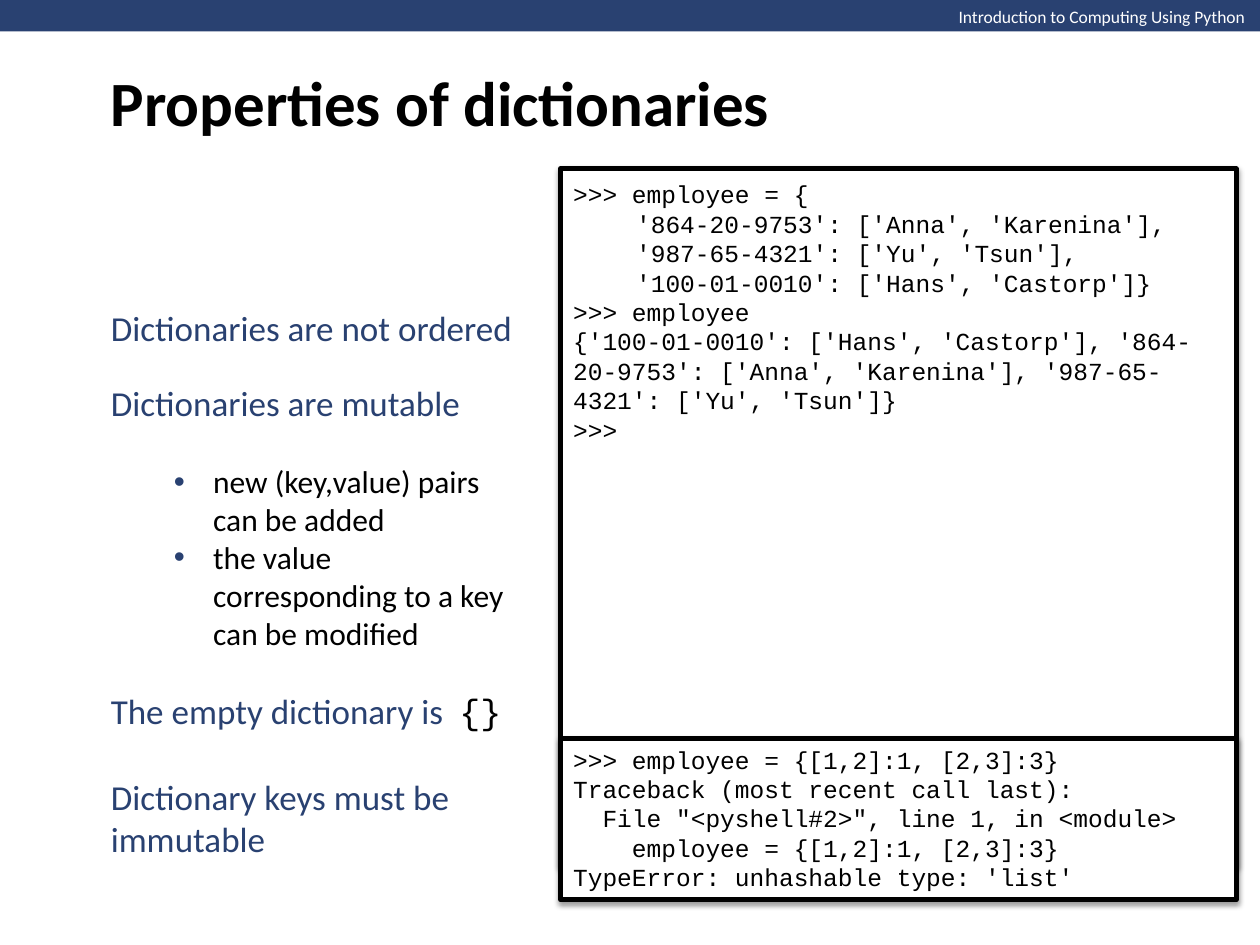
from lxml.etree import SubElement
from pptx import Presentation
from pptx.dml.color import RGBColor
from pptx.enum.shapes import MSO_SHAPE
from pptx.enum.text import MSO_ANCHOR, PP_ALIGN
from pptx.oxml.ns import qn
from pptx.util import Pt

NAVY, BLACK, WHITE = "294171", "000000", "FFFFFF"
SANS, MONO = "Calibri", "Courier New"

EMPLOYEE_SESSION = [
    ">>> employee = {",
    "\t'864-20-9753': ['Anna', 'Karenina'],",
    "\t'987-65-4321': ['Yu', 'Tsun'],",
    "\t'100-01-0010': ['Hans', 'Castorp']}",
    ">>> employee",
    "{'100-01-0010': ['Hans', 'Castorp'], '864-20-9753': ['Anna', 'Karenina'], "
    "'987-65-4321': ['Yu', 'Tsun']}",
    ">>>",
]
ERROR_SESSION = [
    ">>> employee = {[1,2]:1, [2,3]:3}",
    "Traceback (most recent call last):",
    "  File \"<pyshell#2>\", line 1, in <module>",
    "    employee = {[1,2]:1, [2,3]:3}",
    "TypeError: unhashable type: 'list'",
]
MUTABLE_POINTS = [
    "new (key,value) pairs can be added",
    "the value corresponding to a key can be modified",
]


def color(value):
    return RGBColor.from_string(value)


def add_span(para, text, size, tone, font=SANS, bold=False):
    span = para.add_run()
    span.text = text
    span.font.name = font
    span.font.size = Pt(size)
    span.font.bold = bold
    span.font.color.rgb = color(tone)


def add_panel(slide, left, top, width, height, fill):
    panel = slide.shapes.add_shape(
        MSO_SHAPE.RECTANGLE, Pt(left), Pt(top), Pt(width), Pt(height))
    panel.shadow.inherit = False
    panel.fill.solid()
    panel.fill.fore_color.rgb = color(fill)
    panel.line.fill.background()
    return panel


def add_label(slide, left, top, width, height, text, size, tone,
              bold=False, wrap=True, anchor=MSO_ANCHOR.MIDDLE):
    box = slide.shapes.add_textbox(Pt(left), Pt(top), Pt(width), Pt(height))
    frame = box.text_frame
    frame.word_wrap = wrap
    frame.vertical_anchor = anchor
    add_span(frame.paragraphs[0], text, size, tone, bold=bold)
    return frame


def add_bullet(para):
    properties = para._p.get_or_add_pPr()
    properties.set("marL", str(Pt(58.5)))
    properties.set("indent", str(Pt(-22.5)))
    tint = SubElement(properties, qn("a:buClr"))
    SubElement(tint, qn("a:srgbClr"), val=NAVY)
    SubElement(properties, qn("a:buFont"), typeface="Arial")
    SubElement(properties, qn("a:buChar"), char="•")


def add_shadow(shape):
    effects = shape._element.spPr.find(qn("a:effectLst"))
    shadow = SubElement(effects, qn("a:outerShdw"), blurRad=str(Pt(3.1)),
                        dist=str(Pt(1.6)), dir="5400000", rotWithShape="0")
    tint = SubElement(shadow, qn("a:srgbClr"), val=BLACK)
    SubElement(tint, qn("a:alpha"), val="38000")


def add_console(slide, left, top, width, height, lines, inset):
    console = add_panel(slide, left, top, width, height, WHITE)
    console.line.color.rgb = color(BLACK)
    console.line.width = Pt(3)
    add_shadow(console)
    frame = console.text_frame
    frame.word_wrap = True
    frame.vertical_anchor = MSO_ANCHOR.TOP
    frame.margin_top = Pt(inset)
    for index, line in enumerate(lines):
        para = frame.add_paragraph() if index else frame.paragraphs[0]
        para.alignment = PP_ALIGN.LEFT
        para.line_spacing = Pt(16.8)
        add_span(para, line, 14, BLACK, MONO)


def add_header(slide, left, top, width, height):
    add_panel(slide, left, top, width, height, NAVY)
    add_label(slide, left + width - 180, top, 180, 19.4,
              "Introduction to Computing Using Python", 10, WHITE,
              wrap=False, anchor=MSO_ANCHOR.TOP)


def add_properties(slide, left, top, width):
    add_label(slide, left, top, width, 31.5,
              "Dictionaries are not ordered", 20, NAVY, wrap=False)
    mutable = add_label(slide, left, top + 42.5, width, 162.7,
                        "Dictionaries are mutable", 20, NAVY)
    mutable.paragraphs[0].space_after = Pt(22)
    for point in MUTABLE_POINTS:
        para = mutable.add_paragraph()
        para.level = 1
        add_bullet(para)
        add_span(para, point, 18, BLACK)
    empty = add_label(slide, left, top + 219, width, 31.5,
                      "The empty dictionary is  ", 20, NAVY, wrap=False)
    add_span(empty.paragraphs[0], "{}", 20, BLACK, MONO)
    add_label(slide, left, top + 267.8, width, 55.7,
              "Dictionary keys must be immutable", 20, NAVY)


def main():
    deck = Presentation()
    deck.slide_width, deck.slide_height = Pt(720), Pt(540)
    slide = deck.slides.add_slide(deck.slide_layouts[6])
    add_console(slide, 320.4, 96.5, 386, 397.4, EMPLOYEE_SESSION, 6)
    add_console(slide, 320.4, 421.9, 386, 92.2, ERROR_SESSION, 3.6)
    add_header(slide, 0, 0, 720.7, 18)
    add_label(slide, 56.2, 0, 612, 116, "Properties of dictionaries", 36, BLACK, bold=True)
    add_properties(slide, 56.2, 171.4, 246.2)
    deck.save("out.pptx")


if __name__ == "__main__":
    main()
